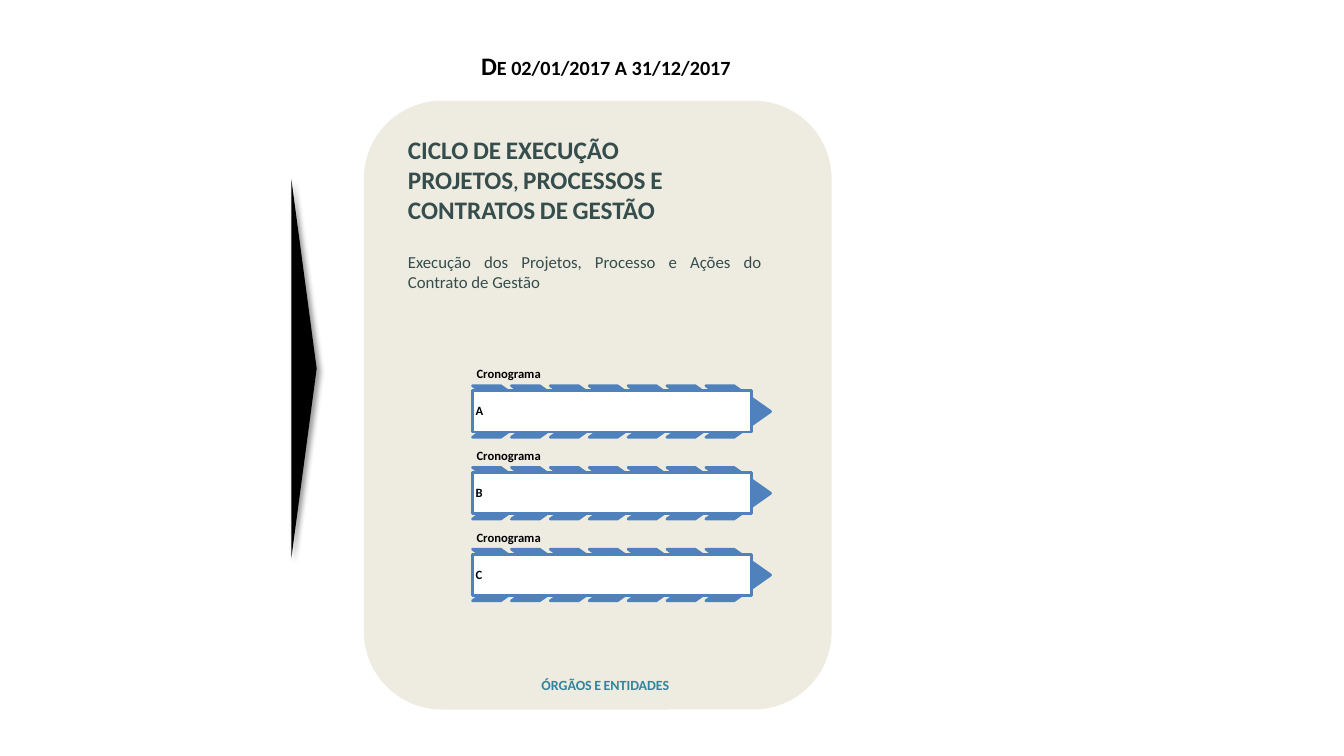
from lxml import etree
from pptx import Presentation
from pptx.dml.color import RGBColor
from pptx.enum.shapes import MSO_SHAPE as Shape
from pptx.enum.text import MSO_ANCHOR as Anchor, PP_ALIGN as Align
from pptx.oxml import parse_xml
from pptx.util import Cm, Pt

COLORS = {
    "panel": "EEECE1",
    "heading": "354D4C",
    "footer": "31859C",
    "schedule": "4F81BD",
    "white": "FFFFFF",
    "black": "000000",
}
FONT = "Calibri"
DRAWING_NS = "http://schemas.openxmlformats.org/drawingml/2006/main"
PHASES = ["A", "B", "C"]
CHEVRON_COUNT = 7


def rgb(name):
    return RGBColor.from_string(COLORS[name])


def add_filled(slide, kind, box, fill, line=None):
    shape = slide.shapes.add_shape(kind, *[Cm(length) for length in box])
    shape.shadow.inherit = False
    shape.fill.solid()
    shape.fill.fore_color.rgb = rgb(fill)
    if line:
        shape.line.color.rgb = rgb(line)
        shape.line.width = Pt(2)
    else:
        shape.line.fill.background()
    return shape


def write(shape, text, size, color, bold=True, small_caps=False,
          align=Align.LEFT, anchor=Anchor.TOP, inset=None, spacing=None,
          wrap=True):
    """Fill a shape with text, one paragraph per line, in a single style."""
    frame = shape.text_frame
    frame.word_wrap = wrap
    frame.vertical_anchor = anchor
    if inset is not None:
        frame.margin_left = frame.margin_right = Cm(inset)
        frame.margin_top = frame.margin_bottom = Cm(inset)
    frame.text = text
    for paragraph in frame.paragraphs:
        paragraph.alignment = align
        if spacing:
            paragraph.line_spacing = spacing
        for run in paragraph.runs:
            run.font.name = FONT
            run.font.size = Pt(size)
            run.font.bold = bold
            run.font.color.rgb = rgb(color)
            if small_caps:
                run.font._element.set("cap", "small")


def add_text(slide, box, text, size, color, **style):
    label = slide.shapes.add_textbox(*[Cm(length) for length in box])
    write(label, text, size, color, **style)
    return label


def add_pointer(slide, left, top, width, height):
    """Thin triangle pointing right, with a soft shadow."""
    middle_x, middle_y = left + width / 2, top + height / 2
    box = (middle_x - height / 2, middle_y - width / 2, height, width)
    pointer = add_filled(slide, Shape.ISOSCELES_TRIANGLE, box, "black")
    pointer.rotation = 90
    effects = pointer._element.spPr.find(f"{{{DRAWING_NS}}}effectLst")
    shadow = parse_xml(
        f'<a:outerShdw xmlns:a="{DRAWING_NS}" blurRad="50800" dist="38100" '
        'dir="2700000" algn="tl" rotWithShape="0"/>')
    tint = etree.SubElement(shadow, f"{{{DRAWING_NS}}}srgbClr",
                            val=COLORS["black"])
    etree.SubElement(tint, f"{{{DRAWING_NS}}}alpha", val="40000")
    effects.append(shadow)


def add_schedule(slide, left, top, phase):
    """Caption, a row of chevrons and the named bar lying over them."""
    add_text(slide, (left, top, 6.93, 0.63), "Cronograma", 9, "black",
             anchor=Anchor.BOTTOM, inset=0.1, spacing=0.9)
    for index in range(CHEVRON_COUNT):
        box = (left + index * 0.98, top + 0.63, 1.63, 1.3)
        chevron = add_filled(slide, Shape.CHEVRON, box, "schedule", "schedule")
        chevron.adjustments[0] = 0.71
    bar = add_filled(slide, Shape.RECTANGLE, (left, top + 0.76, 7.04, 1.04),
                     "white", "schedule")
    write(bar, phase, 9, "black", anchor=Anchor.MIDDLE, inset=0.08, spacing=0.9)


def add_cycle_panel(slide, left, top, width, height):
    add_filled(slide, Shape.ROUNDED_RECTANGLE, (left, top, width, height),
               "panel")
    add_text(slide, (left + 0.86, top + 3.68, 9.42, 1.47),
             "Execução dos Projetos, Processo e Ações do Contrato de Gestão",
             12, "heading", bold=False, align=Align.JUSTIFY)
    heading = add_text(
        slide, (left + 0.86, top + 0.71, 9.98, 2.97),
        "CICLO DE EXECUÇÃO\nPROJETOS, PROCESSOS E CONTRATOS DE GESTÃO",
        18, "heading", small_caps=True)
    heading.text_frame.margin_right = Cm(0.8)
    add_text(slide, (left + 0.41, top + 14.38, 11.35, 0.79),
             "ÓRGÃOS E ENTIDADES", 10, "footer", small_caps=True,
             align=Align.CENTER)
    for row, phase in enumerate(PHASES):
        add_schedule(slide, left + 2.74, top + 6.55 + row * 2.06, phase)


def main():
    deck = Presentation()
    deck.slide_width, deck.slide_height = Cm(33.87), Cm(19.05)
    slide = deck.slides.add_slide(deck.slide_layouts[6])
    add_cycle_panel(slide, 9.17, 2.54, 11.79, 15.34)
    add_text(slide, (10.52, 1.14, 9.5, 1.19), "De 02/01/2017 a 31/12/2017",
             18, "black", small_caps=True, align=Align.CENTER, wrap=False)
    add_pointer(slide, 7.34, 4.5, 0.64, 9.58)
    deck.save("out.pptx")


if __name__ == "__main__":
    main()
